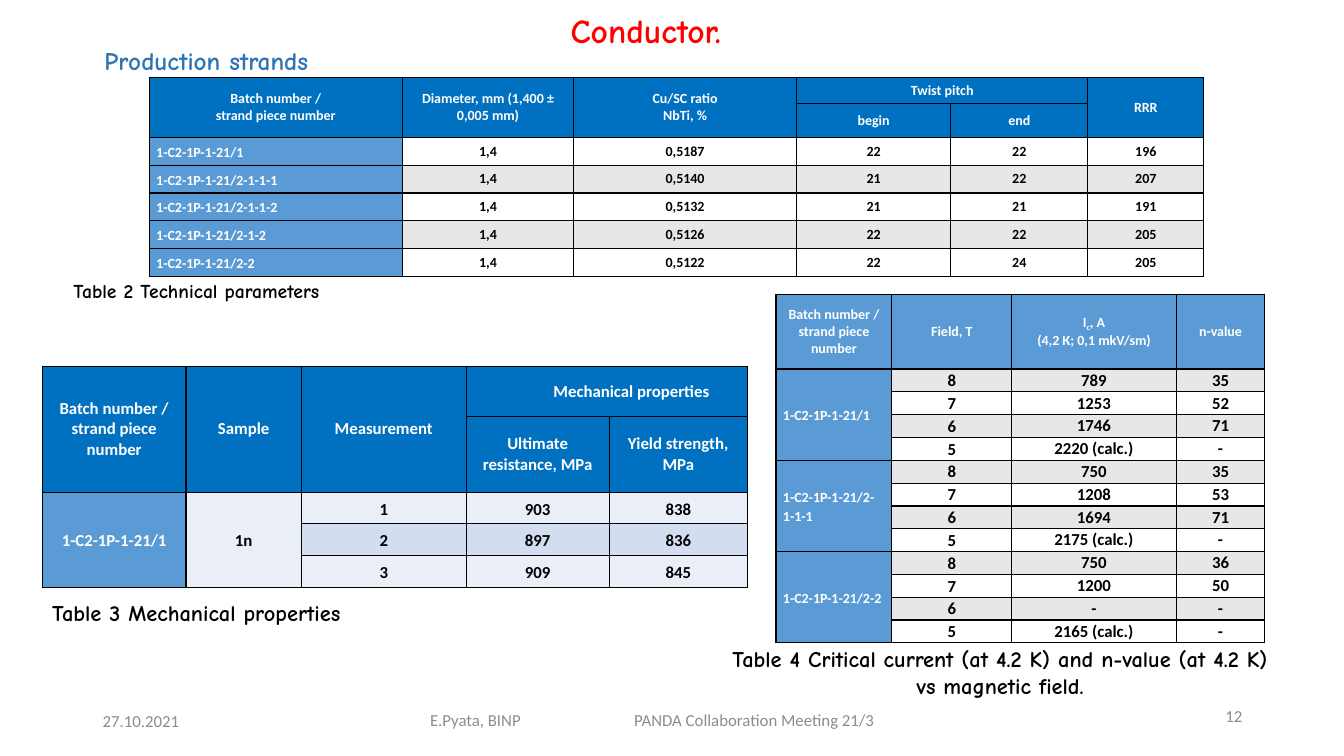
from dataclasses import dataclass
from typing import Optional

from lxml.etree import SubElement
from pptx import Presentation
from pptx.dml.color import RGBColor
from pptx.enum.text import MSO_ANCHOR as Anchor, MSO_AUTO_SIZE as AutoSize, PP_ALIGN as Align
from pptx.oxml.ns import qn
from pptx.util import Emu, Inches, Pt

# The slide is a grid of 160 columns by 90 rows of square cells
SLIDE_WIDTH, SLIDE_HEIGHT = Inches(13.33), Inches(7.5)
UNIT = SLIDE_HEIGHT / 90

COLORS = {
    "red": "FF0000", "heading": "2E75B6", "black": "000000", "white": "FFFFFF",
    "footer": "8C8C8C", "header": "0070C0", "batch": "5B9BD5", "gray": "E7E7E7",
    "pale": "EAEFF7", "pale_band": "D2DEEF",
}
HAND, SANS = "Comic Neue", "Calibri"


@dataclass
class Label:
    text: str
    box: tuple[float, float, float, float]
    size: float
    color: str = "black"
    font: str = HAND
    bold: bool = True
    align: Align = Align.LEFT
    anchor: Anchor = Anchor.TOP
    line: float = 1.0
    gap: float = 0
    tab: float = 0


@dataclass
class Cell:
    text: str  # lines split by \n, subscripts set between bars
    fill: str
    size: float = 10
    color: str = "white"
    align: Align = Align.CENTER
    line: float = 1.0
    rows: int = 1
    cols: int = 1
    indent: float = 0


Grid = list[list[Optional[Cell]]]


@dataclass
class DataTable:
    left: float
    top: float
    widths: list[float]
    heights: list[float]
    cells: Grid


def grid(units: float) -> Emu:
    return Emu(round(units * UNIT))


def rgb(name: str) -> RGBColor:
    return RGBColor.from_string(COLORS[name])


def add_run(paragraph, text: str, font: str, size: float, color: str, bold: bool):
    run = paragraph.add_run()
    run.text = text
    run.font.name, run.font.size, run.font.bold = font, Pt(size), bold
    run.font.color.rgb = rgb(color)
    return run


def write_label(shape, label: Label) -> None:
    shape.left, shape.top, shape.width, shape.height = map(grid, label.box)
    frame = shape.text_frame
    frame.word_wrap, frame.auto_size = True, AutoSize.NONE
    frame.vertical_anchor = label.anchor
    paragraph = frame.paragraphs[0]
    paragraph.alignment, paragraph.line_spacing = label.align, label.line
    paragraph.space_before = paragraph.space_after = Pt(label.gap)
    if label.tab:
        stops = SubElement(paragraph._p.get_or_add_pPr(), qn("a:tabLst"))
        SubElement(stops, qn("a:tab"), pos=str(grid(label.tab)), algn="l")
    add_run(paragraph, label.text, label.font, label.size, label.color, label.bold)


def style_cell(cell, fill: str) -> None:
    cell.margin_left = cell.margin_right = Inches(0.07)
    cell.margin_top = cell.margin_bottom = 0
    cell.vertical_anchor = Anchor.MIDDLE
    props = cell._tc.get_or_add_tcPr()
    for side in ("lnL", "lnR", "lnT", "lnB"):
        border = SubElement(props, qn(f"a:{side}"), w=str(Pt(1)))
        solid = SubElement(border, qn("a:solidFill"))
        SubElement(solid, qn("a:srgbClr"), val=COLORS["black"])
    cell.fill.solid()
    cell.fill.fore_color.rgb = rgb(fill)


def write_cell(cell, spec: Cell) -> None:
    for index, line in enumerate(spec.text.split("\n")):
        frame = cell.text_frame
        paragraph = frame.add_paragraph() if index else frame.paragraphs[0]
        paragraph.alignment, paragraph.line_spacing = spec.align, spec.line
        if spec.indent:
            paragraph._p.get_or_add_pPr().set("indent", str(grid(spec.indent)))
        for part, text in enumerate(line.split("|")):
            run = add_run(paragraph, text, SANS, spec.size, spec.color, True)
            if part % 2:
                run._r.get_or_add_rPr().set("baseline", "-25000")


def draw_table(slide, data: DataTable) -> None:
    table = slide.shapes.add_table(
        len(data.heights), len(data.widths), grid(data.left), grid(data.top),
        grid(sum(data.widths)), grid(sum(data.heights))).table
    table.first_row = table.horz_banding = False
    for column, width in zip(table.columns, data.widths):
        column.width = grid(width)
    for row, height in zip(table.rows, data.heights):
        row.height = grid(height)
    for r, specs in enumerate(data.cells):
        for c, spec in enumerate(specs):
            if spec is None:
                continue
            for y in range(r, r + spec.rows):
                for x in range(c, c + spec.cols):
                    style_cell(table.cell(y, x), spec.fill)
            if spec.rows * spec.cols > 1:
                table.cell(r, c).merge(table.cell(r + spec.rows - 1, c + spec.cols - 1))
            write_cell(table.cell(r, c), spec)


def header(text: str, size: float = 10, **options) -> Cell:
    return Cell(text, "header", size, **options)


def batch(text: str, **options) -> Cell:
    return Cell(text, "batch", align=Align.LEFT, line=1.15, **options)


# Table 2: technical parameters
def technical_table() -> DataTable:
    strands = [
        ("1-C2-1P-1-21/1", "1,4", "0,5187", "22", "22", "196"),
        ("1-C2-1P-1-21/2-1-1-1", "1,4", "0,5140", "21", "22", "207"),
        ("1-C2-1P-1-21/2-1-1-2", "1,4", "0,5132", "21", "21", "191"),
        ("1-C2-1P-1-21/2-1-2", "1,4", "0,5126", "22", "22", "205"),
        ("1-C2-1P-1-21/2-2", "1,4", "0,5122", "22", "24", "205"),
    ]
    cells: Grid = [
        [header("Batch number /\nstrand piece number", rows=2),
         header("Diameter, mm (1,400 ± 0,005 mm)", rows=2),
         header("Cu/SC ratio\nNbTi, %", rows=2),
         header("Twist pitch", cols=2), None, header("RRR", rows=2)],
        [None, None, None, header("begin"), header("end"), None],
    ]
    for index, (name, *values) in enumerate(strands):
        fill = "gray" if index % 2 else "white"
        cells.append([batch(name)] + [Cell(value, fill, color="black") for value in values])
    return DataTable(17.76, 9.24, [30.12, 20.4, 26.52, 18.36, 16.32, 13.8],
                     [3.1, 4.05] + [3.3] * 5, cells)


# Table 3: mechanical properties
def mechanical_table() -> DataTable:
    cells: Grid = [
        [header("Batch number /\nstrand piece number", 12, rows=2),
         header("Sample", 12, rows=2), header("Measurement", 12, rows=2),
         header("Mechanical properties", 12, cols=2, indent=5.88), None],
        [None, None, None, header("Ultimate resistance, MPa", 12),
         header("Yield strength, MPa", 12)],
    ]
    for index, values in enumerate([("1", "903", "838"), ("2", "897", "836"), ("3", "909", "845")]):
        fill = "pale_band" if index % 2 else "pale"
        lead = [None, None] if index else [
            Cell("1-C2-1P-1-21/1", "batch", 12, line=1.15, rows=3),
            Cell("1n", "pale", 12, "black", line=1.15, rows=3)]
        cells.append(lead + [Cell(value, fill, 12, "black", line=1.15) for value in values])
    return DataTable(5.04, 43.6, [17.1, 13.74, 19.6, 17.04, 16.44],
                     [6, 9] + [3.77] * 3, cells)


# Table 4: critical current and n-value at fields of 8 to 5 T
def current_table() -> DataTable:
    strands = {
        "1-C2-1P-1-21/1": [("789", "35"), ("1253", "52"), ("1746", "71"), ("2220 (calc.)", "-")],
        "1-C2-1P-1-21/2-1-1-1": [("750", "35"), ("1208", "53"), ("1694", "71"), ("2175 (calc.)", "-")],
        "1-C2-1P-1-21/2-2": [("750", "36"), ("1200", "50"), ("-", "-"), ("2165 (calc.)", "-")],
    }
    titles = ("Batch number /\nstrand piece number", "Field, T",
              "I|c|, A\n(4,2 К; 0,1 mkV/sm)", "n-value")
    cells: Grid = [[Cell(title, "batch") for title in titles]]
    for name, readings in strands.items():
        for index, values in enumerate(readings):
            fill = "white" if index % 2 else "gray"
            cells.append([None if index else batch(name, rows=4),
                          Cell(str(8 - index), fill, 12, "black", line=1.05)]
                         + [Cell(value, fill, 12, "black") for value in values])
    return DataTable(92.35, 35.04, [13.8, 14.28, 19.56, 10.56], [8.9] + [2.72] * 12, cells)


TITLE = Label("Conductor.", (30.12, 0.6, 93.48, 6), 24, "red", align=Align.CENTER, gap=3.9)
FOOTER = dict(size=12, color="footer", font=SANS, bold=False, anchor=Anchor.MIDDLE)
LABELS = [
    Label("27.10.2021", (11.04, 83.4, 36, 4.8), **FOOTER),
    Label("E.Pyata, BINP\tPANDA Collaboration Meeting 21/3", (50, 83.28, 62, 4.8),
          tab=24.3, **FOOTER),
    Label("12", (113.04, 82.8, 36, 4.8), align=Align.RIGHT, **FOOTER),
    Label("Production strands", (2, 4.08, 45.12, 5.52), 18, "heading",
          align=Align.CENTER, line=1.2, gap=6),
    Label("Table 2 Technical parameters", (7.56, 32.64, 39.96, 4.08), 14),
    Label("Table 3 Mechanical properties", (5.04, 70.68, 80.04, 4.44), 16),
    Label("Table 4 Critical current (at 4.2 K) and n-value (at 4.2 K) vs magnetic field.",
          (85.08, 76.2, 67.92, 7.68), 16, align=Align.CENTER),
]


def main() -> None:
    deck = Presentation()
    deck.slide_width, deck.slide_height = SLIDE_WIDTH, SLIDE_HEIGHT
    slide = deck.slides.add_slide(deck.slide_layouts[5])
    write_label(slide.shapes.title, TITLE)
    for data in (technical_table(), mechanical_table(), current_table()):
        draw_table(slide, data)
    for label in LABELS:
        write_label(slide.shapes.add_textbox(0, 0, 0, 0), label)
    deck.save("out.pptx")


if __name__ == "__main__":
    main()
